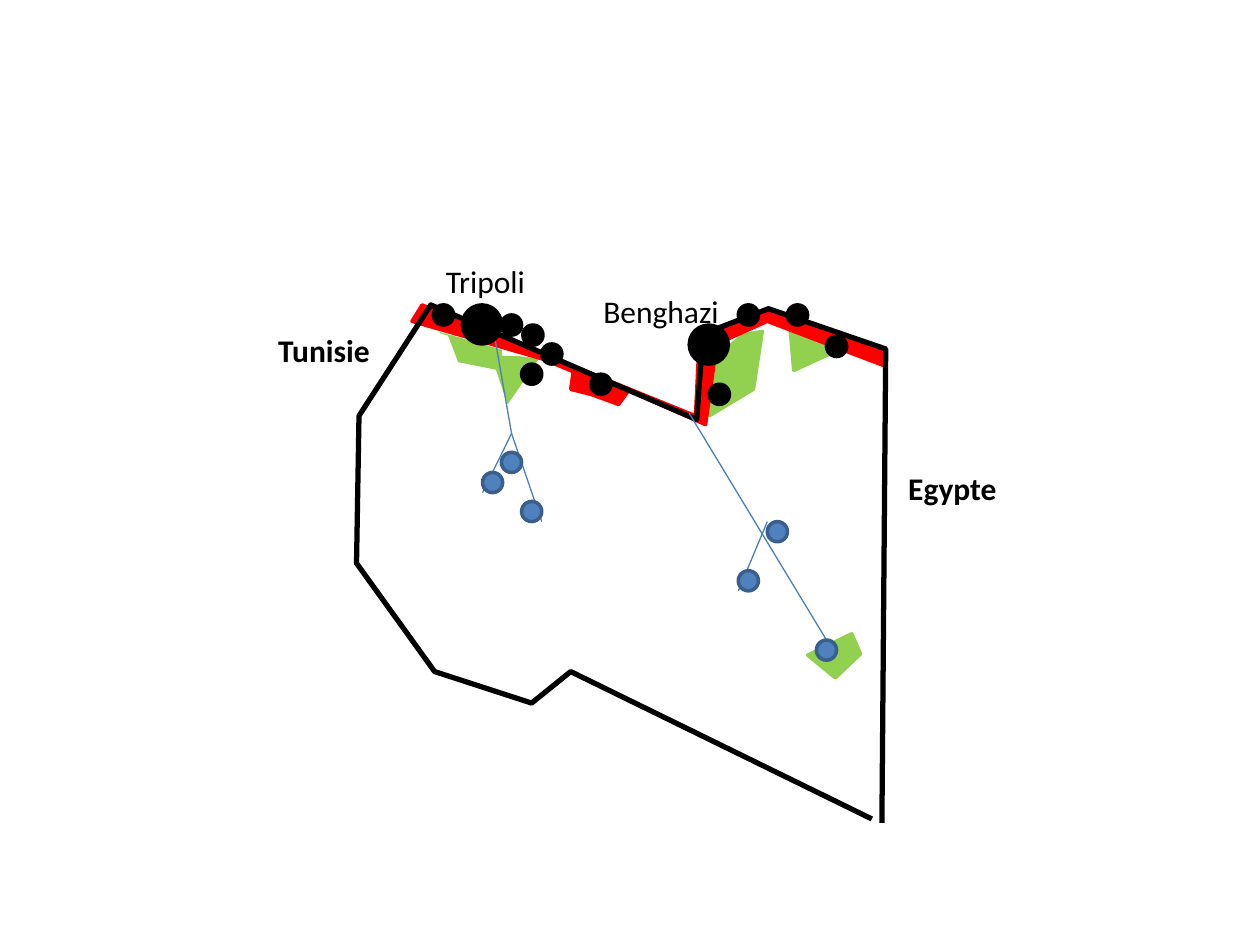
from lxml.etree import SubElement
from pptx import Presentation
from pptx.dml.color import RGBColor
from pptx.enum.shapes import MSO_CONNECTOR, MSO_SHAPE
from pptx.enum.text import MSO_AUTO_SIZE
from pptx.oxml.ns import qn
from pptx.util import Pt

GREEN, RED, BLACK = "92D050", "FF0000", "000000"
WELL_BLUE, WELL_EDGE, PIPE_BLUE = "4F81BD", "3A5F8C", "4B7EBC"
CITY_SIZE, SPOT_SIZE = 31, 16

FARMLAND_EAST = [(627, 260), (630, 294), (663, 279)]
FARMLAND_WEST = [(356, 266), (364, 287), (394, 293), (403, 320), (427, 285),
                 (410, 283), (401, 283), (398, 283), (398, 278), (349, 264)]
FARMLAND_BENGHAZI = [(563, 330), (571, 281), (590, 266), (605, 263), (598, 309)]
COAST = [(327, 255), (335, 242), (552, 330), (555, 269), (609, 245), (700, 279),
         (701, 290), (609, 255), (569, 273), (560, 337), (499, 310), (491, 321),
         (469, 313), (453, 309), (455, 295), (431, 285)]
BORDER = [(700, 653), (703, 277), (610, 245), (558, 265), (553, 333), (342, 242),
          (285, 330), (283, 447), (345, 533), (422, 558), (453, 533), (692, 650)]
OASIS = [(641, 520), (676, 503), (683, 519), (663, 538)]

PIPELINES = [((391, 258), (406, 344)), ((406, 344), (383, 391)),
             ((406, 344), (430, 414)), ((547, 328), (656, 508)),
             ((609, 414), (586, 469))]
CITIES = [(367, 242), (547, 258)]
TOWNS = [(414, 289), (398, 250), (415, 258), (430, 273), (469, 297),
         (563, 305), (586, 242), (625, 242), (656, 267), (344, 242)]
WELLS = [(383, 375), (414, 398), (398, 359), (609, 414), (586, 453), (648, 508)]


def units(value):
    """Convert map units (a hundredth of an inch) to a length."""
    return Pt(value * 0.72)


def color(hex_code):
    return RGBColor.from_string(hex_code)


def format_shape(shape, fill, edge, width):
    shape.shadow.inherit = False
    if fill:
        shape.fill.solid()
        shape.fill.fore_color.rgb = color(fill)
    else:
        shape.fill.background()
    shape.line.color.rgb = color(edge)
    shape.line.width = Pt(width)


def add_area(slide, outline, fill, edge, width=2, close=True):
    builder = slide.shapes.build_freeform(*outline[0], scale=units(1))
    builder.add_line_segments(outline[1:], close=close)
    format_shape(builder.convert_to_shape(), fill, edge, width)


def add_spots(slide, corners, size, fill, edge):
    """Draw equal circles from their top left corners."""
    for left, top in corners:
        spot = slide.shapes.add_shape(MSO_SHAPE.OVAL, units(left), units(top),
                                      units(size), units(size))
        format_shape(spot, fill, edge, 2)


def add_pipeline(slide, start, end):
    pipe = slide.shapes.add_connector(MSO_CONNECTOR.STRAIGHT,
                                      *map(units, (*start, *end)))
    pipe.line.color.rgb = color(PIPE_BLUE)
    pipe.line.width = Pt(0.75)
    SubElement(pipe._element.spPr, qn("a:effectLst"))


def add_label(slide, text, left, top, width, bold=False):
    box = slide.shapes.add_textbox(units(left), units(top), units(width), units(40))
    frame = box.text_frame
    frame.word_wrap = False
    frame.auto_size = MSO_AUTO_SIZE.SHAPE_TO_FIT_TEXT
    run = frame.paragraphs[0].add_run()
    run.text = text
    run.font.name = "Calibri"
    run.font.size = Pt(18)
    run.font.bold = bold
    run.font.color.rgb = color(BLACK)


def main():
    prs = Presentation()
    prs.slide_width, prs.slide_height = Pt(720), Pt(540)
    slide = prs.slides.add_slide(prs.slide_layouts[6])

    add_area(slide, FARMLAND_EAST, GREEN, GREEN)
    add_area(slide, FARMLAND_WEST, GREEN, GREEN, width=0.75, close=False)
    add_area(slide, FARMLAND_BENGHAZI, GREEN, GREEN)
    add_area(slide, COAST, RED, RED)
    add_area(slide, BORDER, None, BLACK, width=3, close=False)
    for start, end in PIPELINES:
        add_pipeline(slide, start, end)
    add_spots(slide, CITIES, CITY_SIZE, BLACK, BLACK)
    add_spots(slide, TOWNS, SPOT_SIZE, BLACK, BLACK)
    add_area(slide, OASIS, GREEN, GREEN)
    add_spots(slide, WELLS, SPOT_SIZE, WELL_BLUE, WELL_EDGE)

    add_label(slide, "Benghazi", 469, 227, 113)
    add_label(slide, "Tripoli", 344, 203, 84)
    add_label(slide, "Egypte", 711, 367, 91, bold=True)
    add_label(slide, "Tunisie", 211, 258, 93, bold=True)
    prs.save("out.pptx")


if __name__ == "__main__":
    main()
